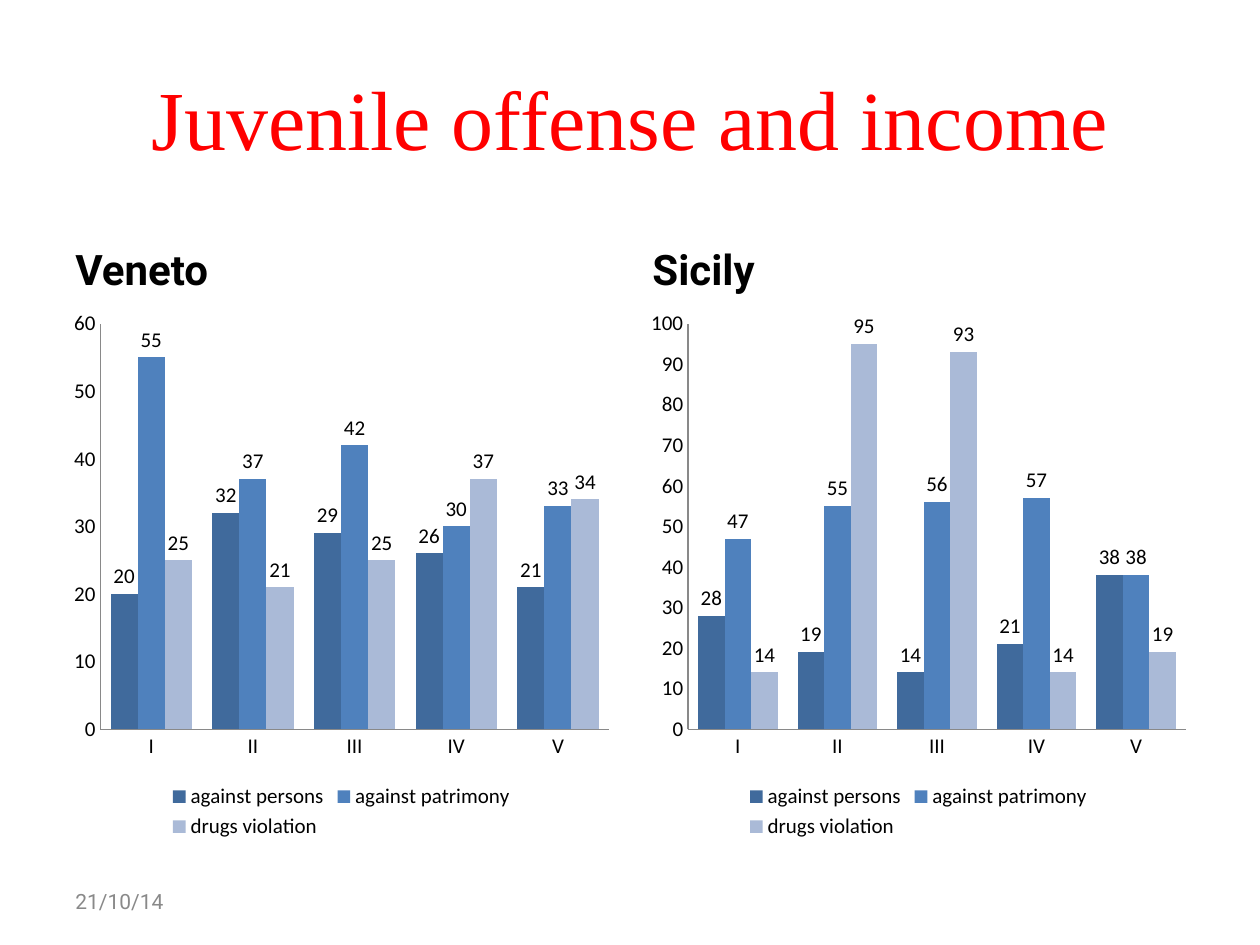
from dataclasses import dataclass

from pptx import Presentation
from pptx.chart.data import CategoryChartData
from pptx.dml.color import RGBColor
from pptx.enum.chart import (XL_CHART_TYPE, XL_LABEL_POSITION,
                             XL_LEGEND_POSITION, XL_TICK_MARK)
from pptx.enum.text import MSO_ANCHOR, PP_ALIGN
from pptx.util import Inches, Pt


@dataclass(frozen=True)
class Theme:
    title_font: str = "Times New Roman"
    text_font: str = "Roboto"
    chart_font: str = "Calibri"
    title_size: int = 48
    heading_size: int = 24
    small_size: int = 12
    title_color: str = "FF0000"
    text_color: str = "000000"
    muted_color: str = "898989"
    series_colors: tuple = ("406A9C", "4F81BD", "AABAD7")


THEME = Theme()
WIDTH, HEIGHT = 10, 7.5
MARGIN, GUTTER = 0.5, 0.16
CONTENT_WIDTH = WIDTH - 2 * MARGIN
PANEL_WIDTH = (CONTENT_WIDTH - GUTTER) / 2
PANEL_TOP, PANEL_HEIGHT = 1.68, 5.02
HEADING_SHARE = 0.14

INCOME_CLASSES = ("I", "II", "III", "IV", "V")
OFFENSES = ("against persons", "against patrimony", "drugs violation")
REGIONS = {
    "Veneto": ((20, 32, 29, 26, 21), (55, 37, 42, 30, 33), (25, 21, 25, 37, 34)),
    "Sicily": ((28, 19, 14, 21, 38), (47, 55, 56, 57, 38), (14, 95, 93, 14, 19)),
}
AXIS_TOPS = {"Veneto": 60, "Sicily": 100}


def set_font(font, name, size, color, bold=False):
    font.name, font.size, font.bold = name, Pt(size), bold
    font.color.rgb = RGBColor.from_string(color)


def add_text(slide, box, text, font, size, color, bold=False,
             anchor=MSO_ANCHOR.MIDDLE, align=PP_ALIGN.LEFT):
    frame = slide.shapes.add_textbox(*map(Inches, box)).text_frame
    frame.word_wrap = True
    frame.vertical_anchor = anchor
    frame.text = text
    paragraph = frame.paragraphs[0]
    paragraph.alignment = align
    set_font(paragraph.runs[0].font, font, size, color, bold)


def style_axis(axis):
    axis.has_major_gridlines = False
    axis.major_tick_mark = axis.minor_tick_mark = XL_TICK_MARK.NONE
    axis.format.line.color.rgb = RGBColor.from_string(THEME.muted_color)
    axis.format.line.width = Pt(0.75)


def add_offense_chart(slide, box, offense_rates, axis_top):
    data = CategoryChartData(number_format="0")
    data.categories = INCOME_CLASSES
    for offense, rates in zip(OFFENSES, offense_rates):
        data.add_series(offense, rates)
    chart = slide.shapes.add_chart(
        XL_CHART_TYPE.COLUMN_CLUSTERED, *map(Inches, box), data).chart
    set_font(chart.font, THEME.chart_font, THEME.small_size, THEME.text_color)
    chart.has_title = False
    chart.has_legend = True
    chart.legend.position = XL_LEGEND_POSITION.BOTTOM
    chart.legend.include_in_layout = False

    style_axis(chart.category_axis)
    style_axis(chart.value_axis)
    chart.value_axis.minimum_scale = 0
    chart.value_axis.maximum_scale = axis_top
    chart.value_axis.major_unit = 10

    plot = chart.plots[0]
    plot.gap_width, plot.overlap = 75, 0
    plot.vary_by_categories = False
    for series, color in zip(plot.series, THEME.series_colors):
        series.format.fill.solid()
        series.format.fill.fore_color.rgb = RGBColor.from_string(color)
        labels = series.data_labels
        labels.show_value = True
        labels.number_format = "0"
        labels.number_format_is_linked = False
        labels.position = XL_LABEL_POSITION.OUTSIDE_END


def add_region_panel(slide, box, region):
    """Place the region's heading above its chart."""
    left, top, width, height = box
    heading_height = height * HEADING_SHARE
    add_text(slide, (left, top, width, heading_height), region, THEME.text_font,
             THEME.heading_size, THEME.text_color, bold=True,
             anchor=MSO_ANCHOR.BOTTOM)
    chart_box = (left, top + heading_height, width, height - heading_height)
    add_offense_chart(slide, chart_box, REGIONS[region], AXIS_TOPS[region])


def add_title(slide, box):
    add_text(slide, box, "Juvenile offense and income", THEME.title_font,
             THEME.title_size, THEME.title_color, align=PP_ALIGN.CENTER)


def add_date(slide, box):
    add_text(slide, box, "21/10/14", THEME.text_font, THEME.small_size,
             THEME.muted_color)


def main():
    deck = Presentation()
    deck.slide_width, deck.slide_height = Inches(WIDTH), Inches(HEIGHT)
    slide = deck.slides.add_slide(deck.slide_layouts[6])
    add_title(slide, (MARGIN, HEIGHT * 0.04, CONTENT_WIDTH, HEIGHT / 6))
    for column, region in enumerate(REGIONS):
        left = MARGIN + column * (PANEL_WIDTH + GUTTER)
        add_region_panel(slide, (left, PANEL_TOP, PANEL_WIDTH, PANEL_HEIGHT), region)
    add_date(slide, (MARGIN, 6.95, 2.33, 0.4))
    deck.save("out.pptx")


if __name__ == "__main__":
    main()
